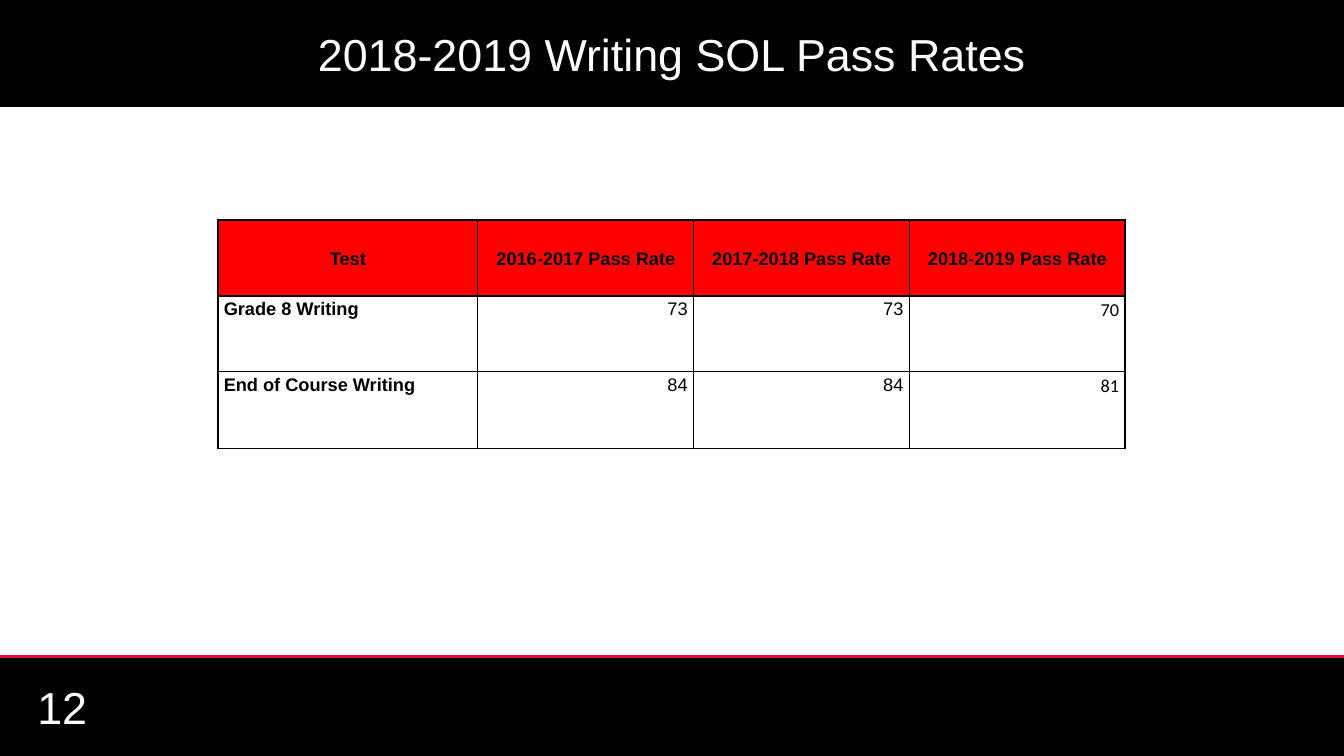
from dataclasses import dataclass

from lxml import etree
from pptx import Presentation
from pptx.dml.color import RGBColor
from pptx.enum.shapes import MSO_CONNECTOR, MSO_SHAPE
from pptx.enum.text import MSO_ANCHOR, PP_ALIGN
from pptx.oxml.ns import qn
from pptx.util import Inches, Pt

LEFT, MID, RIGHT = PP_ALIGN.LEFT, PP_ALIGN.CENTER, PP_ALIGN.RIGHT
TOP, CENTER = MSO_ANCHOR.TOP, MSO_ANCHOR.MIDDLE
RECT, LINE = MSO_SHAPE.RECTANGLE, MSO_CONNECTOR.STRAIGHT
WIDE, HIGH = 13.33, 7.5
BLACK, WHITE, RED, ROSE = "000000", "FFFFFF", "FF0000", "E20D38"
THICK, THIN = 1.5, 0.75
FOOT = 6.51 / HIGH
COLS, ROWS = (2.58, 2.14, 2.14, 2.14), (0.76, 0.75, 0.76)
DATA = (
    ("Test", "2016-2017 Pass Rate", "2017-2018 Pass Rate", "2018-2019 Pass Rate"),
    ("Grade 8 Writing", "73", "73", "70"),
    ("End of Course Writing", "84", "84", "81"),
)


@dataclass
class Box:
    """Hold a place as shares of the slide's size."""
    left: float
    top: float
    width: float
    height: float

    def place(self) -> tuple:
        """Return the place as lengths."""
        return (Inches(self.left * WIDE), Inches(self.top * HIGH),
                Inches(self.width * WIDE), Inches(self.height * HIGH))


@dataclass
class Style:
    """Hold the look of one piece of text."""
    size: float
    color: str
    align: int = LEFT
    bold: bool = False
    name: str = "Arial"
    space: float = 1.0


HEAD = Box(0, 0, 1, 1.06 / HIGH)
BASE = Box(0, FOOT, 1, 1 - FOOT)
PAGE = Box(0.24 / WIDE, 6.81 / HIGH, 3.11 / WIDE, 0.4 / HIGH)
GRID = Box(2.16 / WIDE, 2.18 / HIGH, sum(COLS) / WIDE, sum(ROWS) / HIGH)


def paint(code: str) -> RGBColor:
    """Turn a hex string into a colour."""
    return RGBColor.from_string(code)


def apply(item: object, values: dict) -> None:
    """Set each named value on an item."""
    for name, value in values.items():
        setattr(item, name, value)


def write(frame: object, text: str, style: Style) -> None:
    """Write one styled paragraph."""
    para = frame.paragraphs[0]
    run = para.add_run()
    run.text = text
    apply(para, {"alignment": style.align, "line_spacing": style.space})
    apply(run.font, {"name": style.name, "size": Pt(style.size), "bold": style.bold})
    run.font.color.rgb = paint(style.color)


def inset(frame: object, side: float, edge: float) -> None:
    """Set wrapping, anchor and margins of a text frame."""
    apply(frame, {"word_wrap": True, "vertical_anchor": CENTER,
                  "margin_left": Inches(side), "margin_right": Inches(side),
                  "margin_top": Inches(edge), "margin_bottom": Inches(edge)})


def band(slide: object, box: Box) -> object:
    """Draw a black band and return its text frame."""
    shape = slide.shapes.add_shape(RECT, *box.place())
    shape.shadow.inherit = False
    shape.fill.solid()
    shape.fill.fore_color.rgb = paint(BLACK)
    shape.line.fill.background()
    return shape.text_frame


def rule(slide: object, share: float) -> None:
    """Draw the line across the slide."""
    level = Inches(share * HIGH)
    line = slide.shapes.add_connector(LINE, 0, level, Inches(WIDE), level)
    line.line.color.rgb = paint(ROSE)
    line.line.width = Pt(2)
    etree.SubElement(line._element.spPr, qn("a:effectLst"))


def edge(cell: object, widths: dict) -> None:
    """Draw the borders of a cell."""
    props = cell._tc.get_or_add_tcPr()
    for side, width in widths.items():
        line = etree.SubElement(props, qn(f"a:ln{side}"), w=str(Pt(width)))
        fill = etree.SubElement(line, qn("a:solidFill"))
        etree.SubElement(fill, qn("a:srgbClr"), val=BLACK)


def fill(cell: object, row: int, col: int) -> None:
    """Fill and write one table cell."""
    last = len(COLS) - 1
    edge(cell, {"L": THIN if col else THICK, "R": THICK if col == last else THIN,
                "T": THIN if row > 1 else THICK, "B": THIN if row else THICK})
    if row:
        cell.fill.background()
    else:
        cell.fill.solid()
        cell.fill.fore_color.rgb = paint(RED)
    apply(cell, {"vertical_anchor": TOP if row else CENTER,
                 "margin_left": Inches(0.06), "margin_right": Inches(0.06),
                 "margin_top": 0, "margin_bottom": 0})
    align = MID if not row else RIGHT if col else LEFT
    face = "Calibri" if row and col == last else "Arial"
    write(cell.text_frame, DATA[row][col],
          Style(13, BLACK, align, not (row and col), face, 1.15))


def chart(slide: object) -> None:
    """Draw the table of pass rates."""
    table = slide.shapes.add_table(len(ROWS), len(COLS), *GRID.place()).table
    apply(table, {"first_row": False, "horz_banding": False})
    for col, width in enumerate(COLS):
        table.columns[col].width = Inches(width)
    for row, height in enumerate(ROWS):
        table.rows[row].height = Inches(height)
        for col in range(len(COLS)):
            fill(table.cell(row, col), row, col)


def main() -> None:
    """Build and save the slide."""
    deck = Presentation()
    apply(deck, {"slide_width": Inches(WIDE), "slide_height": Inches(HIGH)})
    slide = deck.slides.add_slide(deck.slide_layouts[6])
    slide.background.fill.solid()
    slide.background.fill.fore_color.rgb = paint(WHITE)
    band(slide, BASE)
    rule(slide, FOOT)
    page = slide.shapes.add_textbox(*PAGE.place()).text_frame
    inset(page, 0.13, 0.07)
    write(page, "12", Style(32, WHITE))
    chart(slide)
    title = band(slide, HEAD)
    inset(title, 0.5, 0)
    write(title, "2018-2019 Writing SOL Pass Rates", Style(32, WHITE, MID))
    deck.save("out.pptx")


if __name__ == "__main__":
    main()
